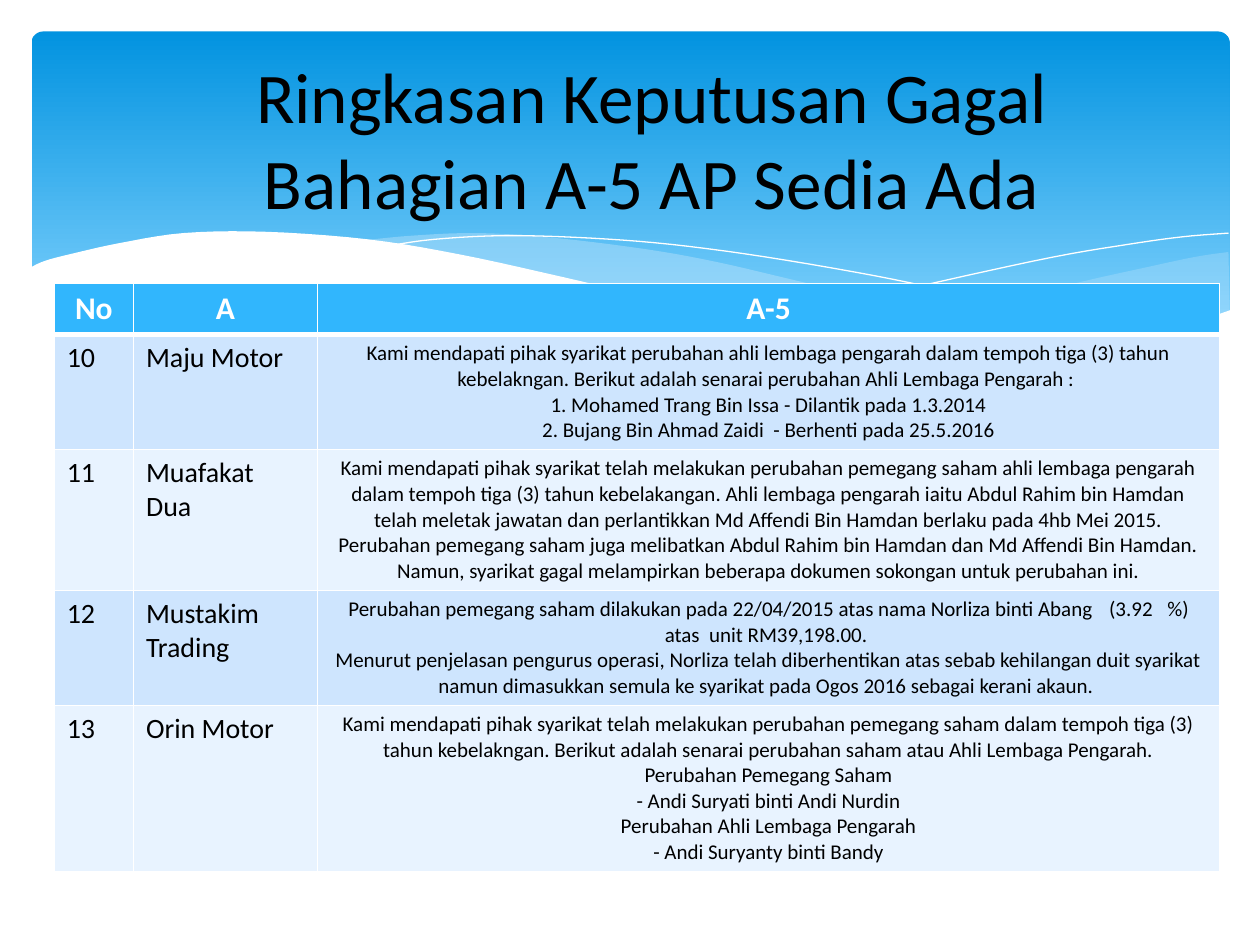
from lxml import etree
from pptx import Presentation
from pptx.dml.color import RGBColor
from pptx.enum import shapes, text
from pptx.oxml import ns
from pptx.util import Inches, Pt

FONT = "Calibri"
COLORS = {
    "black": "000000", "white": "FFFFFF",
    "band_top": "0293E0", "band_bottom": "83D3FE", "wave": "C6E7FC",
    "header": "31B6FD", "odd_row": "CEE5FE", "even_row": "E8F3FF",
}

# Each wave is a list of curves, in inches from the corner of the wave area
RIGHT_WAVE = [
    [(9.52, .16), (9.25, .2), (8.83, .29), (8.38, .39), (7.82, .53), (7.3, .64), (6.83, .73), (6.38, .81)],
    [(6.38, .81), (6.82, .87), (7.34, .92), (7.8, .94), (8.31, .92), (8.74, .86), (9.12, .78), (9.4, .68),
     (9.53, .63)],
]
MIDDLE_WAVE = [
    [(8.7, .89), (7.84, .76), (6.83, .56), (6.06, .38), (5.46, .24), (4.91, .14), (4.19, .05), (3.57, .01),
     (3.05, .03), (2.63, .07)],
    [(2.63, .07), (3.19, .15), (3.81, .27), (4.26, .38), (5.07, .56), (5.78, .71), (6.42, .82), (6.99, .9),
     (7.5, .93), (8.05, .94), (8.7, .89)],
]
FALLING_LINE = [[(2.86, .11), (3.21, .06), (3.78, .03), (4.46, .05), (5.1, .1), (5.85, .2), (6.72, .35),
                 (7.37, .49), (8.08, .67), (8.84, .88)]]
RISING_LINE = [[(5.9, .73), (6.49, .57), (7.25, .39), (8.13, .2), (8.72, .1), (9.15, .04), (9.52, .01)]]
FRONT_WAVE = [
    [(9.54, .62), (8.97, .81), (8.4, .9), (7.7, .93), (7.03, .88), (6.25, .78), (5.32, .61), (4.24, .36),
     (3.42, .18), (2.69, .06), (1.88, 0), (1.23, .01), (.72, .09), (.36, .17), (.13, .23), (0, .29)],
    [(0, 1.45), (9.54, 1.45)],
]

TITLE = ["Ringkasan Keputusan Gagal", "Bahagian A-5 AP Sedia Ada"]
HEADINGS = ["No", "A", "A-5"]
FINDINGS = [
    ("10", "Maju Motor", [
        "Kami mendapati pihak syarikat perubahan ahli lembaga pengarah dalam tempoh tiga (3) tahun "
        "kebelakngan. Berikut adalah senarai perubahan Ahli Lembaga Pengarah : ",
        "1. Mohamed Trang Bin Issa - Dilantik pada 1.3.2014",
        "2. Bujang Bin Ahmad Zaidi  - Berhenti pada 25.5.2016"]),
    ("11", "Muafakat Dua", [
        "Kami mendapati pihak syarikat telah melakukan perubahan pemegang saham ahli lembaga pengarah "
        "dalam tempoh tiga (3) tahun kebelakangan. Ahli lembaga pengarah iaitu Abdul Rahim bin Hamdan "
        "telah meletak jawatan dan perlantikkan Md Affendi Bin Hamdan berlaku pada 4hb Mei 2015. "
        "Perubahan pemegang saham juga melibatkan Abdul Rahim bin Hamdan dan Md Affendi Bin Hamdan. "
        "Namun, syarikat gagal melampirkan beberapa dokumen sokongan untuk perubahan ini."]),
    ("12", "Mustakim Trading", [
        "Perubahan pemegang saham dilakukan pada 22/04/2015 atas nama Norliza binti Abang\t (3.92\t%) "
        "atas  unit RM39,198.00. ",
        "Menurut penjelasan pengurus operasi, Norliza telah diberhentikan atas sebab kehilangan duit "
        "syarikat namun dimasukkan semula ke syarikat pada Ogos 2016 sebagai kerani akaun. "]),
    ("13", "Orin Motor", [
        "Kami mendapati pihak syarikat telah melakukan perubahan pemegang saham dalam tempoh tiga (3) "
        "tahun kebelakngan. Berikut adalah senarai perubahan saham atau Ahli Lembaga Pengarah.",
        "Perubahan Pemegang Saham",
        "- Andi Suryati binti Andi Nurdin",
        "Perubahan Ahli Lembaga Pengarah",
        "- Andi Suryanty binti Bandy"]),
]


def rgb(name):
    return RGBColor.from_string(COLORS[name])


def write(frame, lines, size=16, color="black", bold=False, align=text.PP_ALIGN.LEFT):
    for i, line in enumerate(lines):
        paragraph = frame.paragraphs[0] if i == 0 else frame.add_paragraph()
        paragraph.alignment = align
        run = paragraph.add_run()
        run.text = line
        run.font.name, run.font.size, run.font.bold = FONT, Pt(size), bold
        run.font.color.rgb = rgb(color)


def smooth(points, steps=5):
    """Points along a Catmull-Rom curve through the given points."""
    if len(points) < 3:
        return points
    padded = [points[0], *points, points[-1]]
    curve = [points[0]]
    for a, b, c, d in zip(padded, padded[1:], padded[2:], padded[3:]):
        for step in range(1, steps + 1):
            t = step / steps
            curve.append(tuple(
                (2 * q + (r - p) * t + (2 * p - 5 * q + 4 * r - s) * t ** 2
                 + (3 * q - p - 3 * r + s) * t ** 3) / 2
                for p, q, r, s in zip(a, b, c, d)))
    return curve


def add_wave(group, left, top, curves, fill=None, opacity=100):
    """Filled wave, or a white hairline when no fill is given."""
    points = [(left + Inches(x), top + Inches(y)) for curve in curves for x, y in smooth(curve)]
    builder = group.shapes.build_freeform(*points[0])
    builder.add_line_segments(points[1:], close=fill is not None)
    wave = builder.convert_to_shape()
    wave.shadow.inherit = False
    if fill is None:
        wave.fill.background()
        wave.line.color.rgb = rgb("white")
        wave.line.width = Pt(0)
        return
    wave.fill.solid()
    wave.fill.fore_color.rgb = rgb(fill)
    wave.line.fill.background()
    if opacity < 100:
        color = wave.element.spPr.find(ns.qn("a:solidFill"))[0]
        etree.SubElement(color, ns.qn("a:alpha"), val=str(opacity * 1000))


def add_band(slide, left, top, width, height):
    band = slide.shapes.add_shape(shapes.MSO_SHAPE.ROUNDED_RECTANGLE, left, top, width, height)
    band.adjustments[0] = 0.034
    band.shadow.inherit = False
    band.line.fill.background()
    band.fill.gradient()
    band.fill.gradient_angle = 270
    for stop, position, color in zip(band.fill.gradient_stops, (0, 0.9), ("band_top", "band_bottom")):
        stop.position = position
        stop.color.rgb = rgb(color)

    # Waves across the lower edge
    group = slide.shapes.add_group_shape()
    corner = left - Inches(0.02), top + Inches(1.59)
    add_wave(group, *corner, RIGHT_WAVE, "wave", 29)
    add_wave(group, *corner, MIDDLE_WAVE, "wave", 40)
    add_wave(group, *corner, FALLING_LINE)
    add_wave(group, *corner, RISING_LINE)
    add_wave(group, *corner, FRONT_WAVE, "white")


def place_title(slide, left, top, width, height):
    title = slide.shapes.title
    slide.shapes.element.append(title.element)  # in front of the band
    title.left, title.top, title.width, title.height = left, top, width, height
    frame = title.text_frame
    frame.auto_size = text.MSO_AUTO_SIZE.NONE
    frame.vertical_anchor = text.MSO_ANCHOR.MIDDLE
    write(frame, TITLE, size=40.7, align=text.PP_ALIGN.CENTER)


def format_cell(cell, fill, bottom=1):
    properties = cell._tc.get_or_add_tcPr()
    for side, points in (("L", 1), ("R", 1), ("T", 1), ("B", bottom)):
        border = etree.SubElement(properties, ns.qn(f"a:ln{side}"), w=str(Pt(points)))
        solid = etree.SubElement(border, ns.qn("a:solidFill"))
        etree.SubElement(solid, ns.qn("a:srgbClr"), val=COLORS["white"])
    cell.fill.solid()
    cell.fill.fore_color.rgb = rgb(fill)


def add_findings(slide, left, top, width, height):
    table = slide.shapes.add_table(len(FINDINGS) + 1, len(HEADINGS), left, top, width, height).table
    number_width, company_width = Inches(0.63), Inches(1.46)
    for column, size in zip(table.columns, (number_width, company_width, width - number_width - company_width)):
        column.width = size
    for i, row in enumerate(table.rows):
        row.height = Inches(0.85 if i else 0.38)

    # Header row
    for cell, heading in zip(table.rows[0].cells, HEADINGS):
        format_cell(cell, "header", bottom=3)
        write(cell.text_frame, [heading], size=18, color="white", bold=True, align=text.PP_ALIGN.CENTER)

    # One row for each company
    for i, (number, company, remarks) in enumerate(FINDINGS, 1):
        cells = list(table.rows[i].cells)
        for cell in cells:
            format_cell(cell, "odd_row" if i % 2 else "even_row")
        write(cells[0].text_frame, [number])
        write(cells[1].text_frame, [company])
        write(cells[2].text_frame, remarks, size=12, align=text.PP_ALIGN.CENTER)


def main():
    deck = Presentation()
    deck.slide_width, deck.slide_height = Inches(10), Inches(7.5)
    slide = deck.slides.add_slide(deck.slide_layouts[5])
    add_band(slide, Inches(0.25), Inches(0.25), Inches(9.51), Inches(2.7))
    place_title(slide, Inches(0.67), Inches(0.47), Inches(9), Inches(1.25))
    add_findings(slide, Inches(0.43), Inches(2.25), Inches(9.25), Inches(4.6))
    deck.save("out.pptx")


if __name__ == "__main__":
    main()
